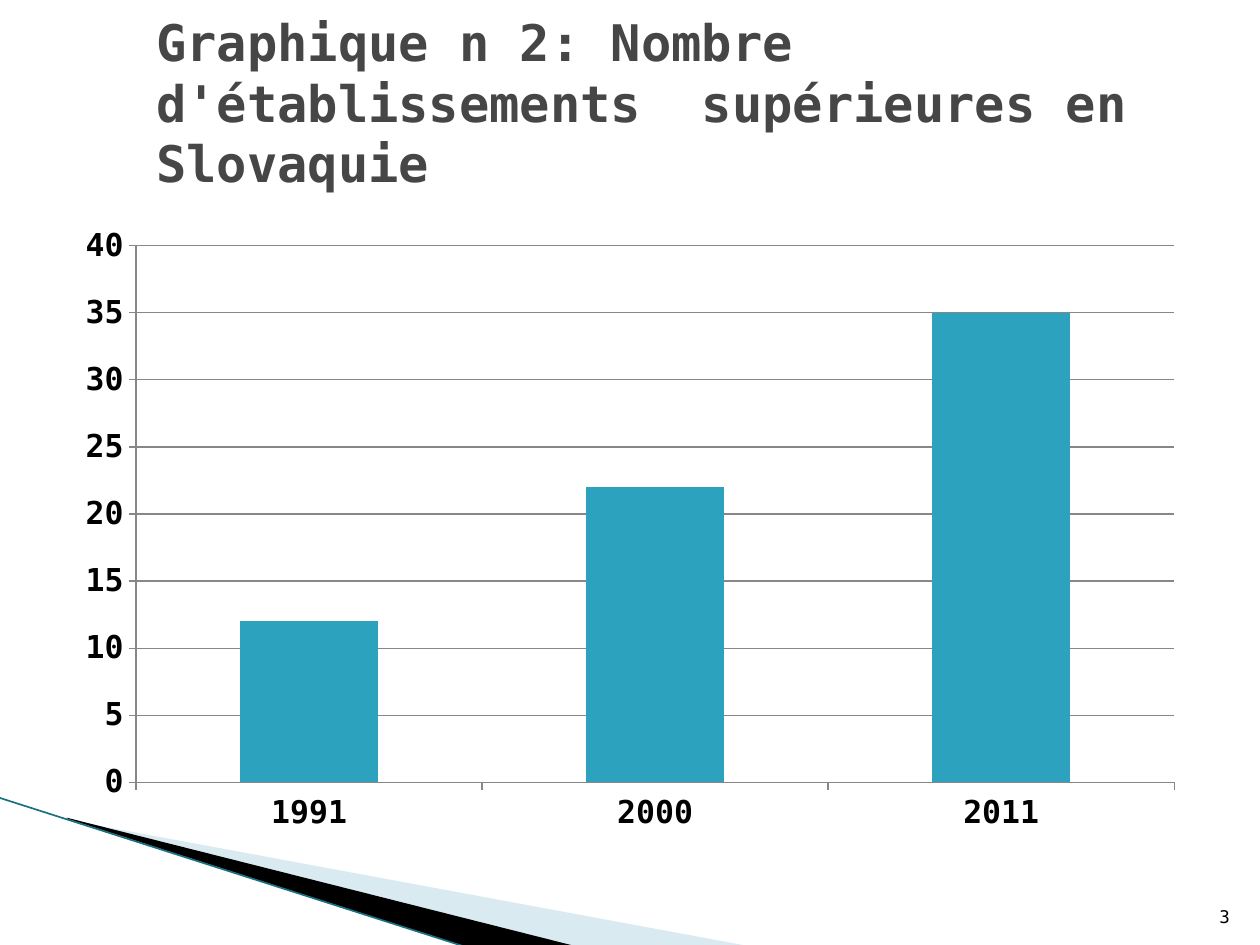
"""Slide with a column chart of higher education institutions in Slovakia."""
import pptx
import pptx.chart.data
import pptx.dml.color
import pptx.enum.chart
import pptx.enum.shapes
import pptx.enum.text
import pptx.oxml
import pptx.oxml.ns
import pptx.util
from lxml import etree
from pptx.util import Inches

FONT = "DejaVu Sans Mono"
COLOURS = {
    "title": "464646",
    "text": "000000",
    "bars": "2DA2BF",
    "grid": "878787",
    "pale": "A0CBDC",
    "dark": "000000",
    "edge": "1B6F82",
}


def colour(name):
    return pptx.dml.color.RGBColor.from_string(COLOURS[name])


def add_text(slide, box, text, size, name, bold, align, anchor, bottom):
    frame = slide.shapes.add_textbox(*map(Inches, box)).text_frame
    frame.word_wrap = True
    frame.vertical_anchor = anchor
    frame.margin_bottom = Inches(bottom)
    paragraph = frame.paragraphs[0]
    paragraph.alignment = align
    run = paragraph.add_run()
    run.text = text
    run.font.name = FONT
    run.font.size = pptx.util.Pt(size)
    run.font.bold = bold
    run.font.color.rgb = colour(name)


deck = pptx.Presentation()
deck.slide_width, deck.slide_height = Inches(10), Inches(7.5)
slide = deck.slides.add_slide(deck.slide_layouts[6])
qn = pptx.oxml.ns.qn

wedges = [
    ("pale", 40, [(0.55, 6.51), (5.95, 7.51), (4.56, 7.51), (0.55, 6.5)]),
    ("dark", 100, [(0.53, 6.49), (4.57, 7.51), (3.72, 7.52), (0.54, 6.5)]),
]
for name, opacity, corners in wedges:
    points = [(Inches(x), Inches(y)) for x, y in corners]
    builder = slide.shapes.build_freeform(*points[0], scale=1.0)
    builder.add_line_segments(points[1:], close=True)
    wedge = builder.convert_to_shape()
    wedge.shadow.inherit = False
    wedge.fill.solid()
    wedge.fill.fore_color.rgb = colour(name)
    wedge.line.fill.background()
    if opacity < 100:
        tint = wedge.fill._xPr.find(qn("a:solidFill"))[0]
        etree.SubElement(tint, qn("a:alpha"), val=str(opacity * 1000))

edge = slide.shapes.add_connector(
    pptx.enum.shapes.MSO_CONNECTOR.STRAIGHT,
    Inches(-0.01), Inches(6.33), Inches(3.71), Inches(7.52),
)
edge.line.color.rgb = colour("edge")
edge.line.width = pptx.util.Pt(0.95)
etree.SubElement(edge._element.spPr, qn("a:effectLst"))

counts = pptx.chart.data.CategoryChartData()
counts.categories = ["1991", "2000", "2011"]
counts.add_series("Series 1", (12, 22, 35))
left, top, width, height = 0.5, 1.7, 9, 5
chart = slide.shapes.add_chart(
    pptx.enum.chart.XL_CHART_TYPE.COLUMN_CLUSTERED,
    Inches(left), Inches(top), Inches(width), Inches(height), counts,
).chart
chart.has_title = False
chart.has_legend = False
chart.font.name = FONT
chart.font.size = pptx.util.Pt(10)
chart.font.color.rgb = colour("text")

columns = chart.plots[0]
columns.gap_width = 150
columns.vary_by_categories = False
bars = columns.series[0].format.fill
bars.solid()
bars.fore_color.rgb = colour("bars")

years, values = chart.category_axis, chart.value_axis
for axis in (years, values):
    axis.major_tick_mark = pptx.enum.chart.XL_TICK_MARK.OUTSIDE
    axis.minor_tick_mark = pptx.enum.chart.XL_TICK_MARK.NONE
    axis.format.line.color.rgb = colour("grid")
    labels = axis.tick_labels.font
    labels.name = FONT
    labels.size = pptx.util.Pt(18)
    labels.bold = True
    labels.color.rgb = colour("text")
values.minimum_scale, values.maximum_scale, values.major_unit = 0, 40, 5
values.has_major_gridlines = True
values.major_gridlines.format.line.color.rgb = colour("grid")

plot_area = chart._chartSpace.chart.plotArea
for old in plot_area.findall(qn("c:layout")):
    plot_area.remove(old)
layout = etree.Element(qn("c:layout"))
manual = etree.SubElement(layout, qn("c:manualLayout"))
for tag, value in [
    ("layoutTarget", "inner"),
    ("xMode", "edge"),
    ("yMode", "edge"),
    ("x", (1.08 - left) / width),
    ("y", (1.95 - top) / height),
    ("w", 8.24 / width),
    ("h", 4.26 / height),
]:
    etree.SubElement(manual, qn("c:" + tag), val=str(value))
plot_area.insert(0, layout)

ALIGN, ANCHOR = pptx.enum.text.PP_ALIGN, pptx.enum.text.MSO_ANCHOR
add_text(
    slide, (1.14, 0.52, 8.35, 1.03),
    "Graphique n 2: Nombre d'établissements  supérieures en Slovaquie",
    28.8, "title", True, ALIGN.LEFT, ANCHOR.MIDDLE, 0.5,
)
add_text(
    slide, (9.46, 7.01, 0.4, 0.4), "3",
    10, "text", False, ALIGN.RIGHT, ANCHOR.BOTTOM, 0.05,
)

deck.save("out.pptx")
